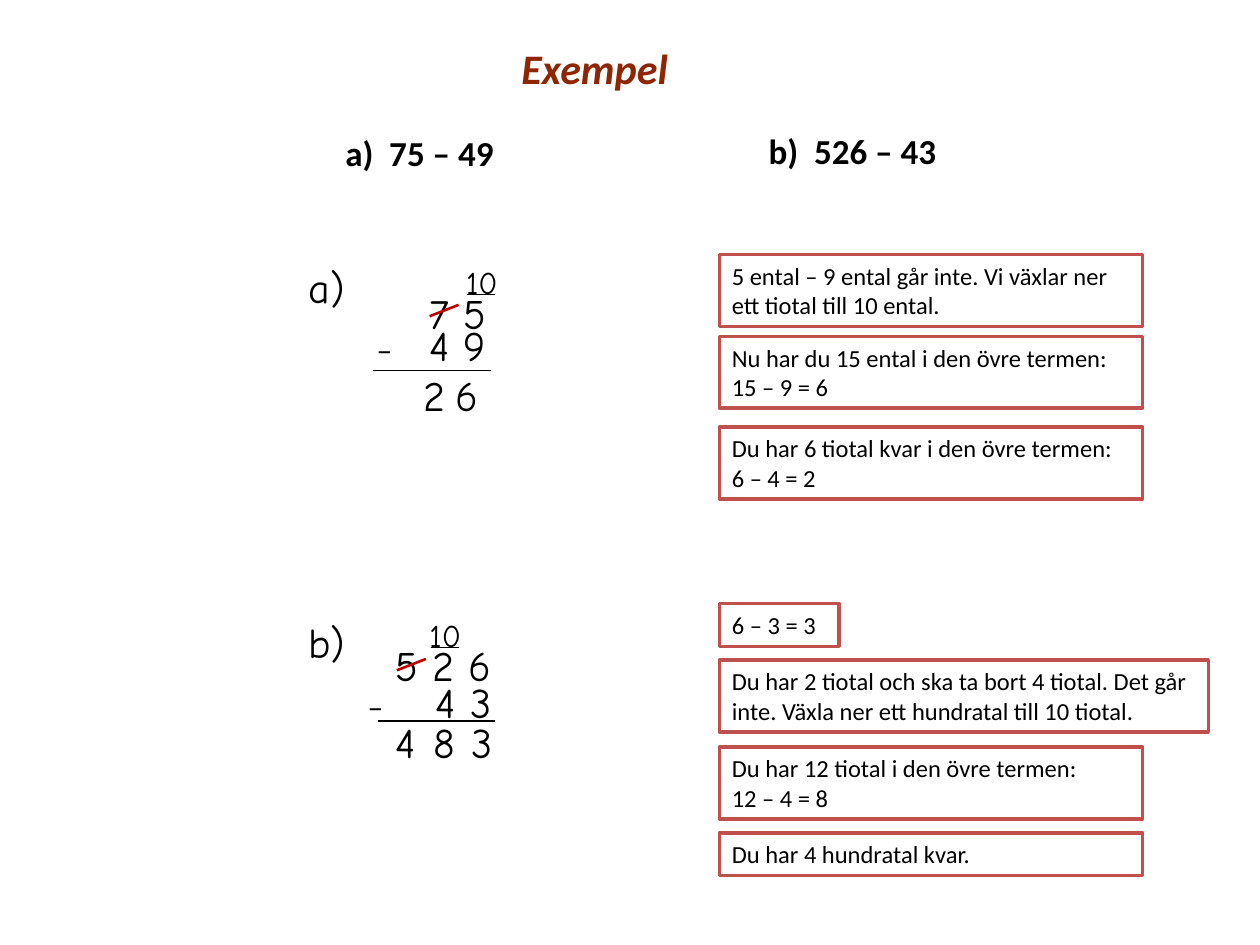
"""Build the slide with two worked examples of column subtraction."""
from lxml.etree import SubElement
from pptx import Presentation
from pptx.dml.color import RGBColor
from pptx.enum.shapes import MSO_CONNECTOR as Connector, MSO_SHAPE as Shape
from pptx.enum.text import MSO_ANCHOR as Anchor
from pptx.oxml.ns import qn
from pptx.util import Inches, Pt


def color(value):
    return RGBColor.from_string(value)


def write(frame, text, font="Comic Neue", size=24, ink="000000", bold=False, italic=False, wrap=True):
    frame.word_wrap = wrap
    frame.text = text
    for paragraph in frame.paragraphs:
        style = paragraph.runs[0].font
        style.name = font
        style.size = Pt(size)
        style.bold = bold
        style.italic = italic
        style.color.rgb = color(ink)


presentation = Presentation()
presentation.slide_width = Inches(10)
presentation.slide_height = Inches(7.5)
slide = presentation.slides.add_slide(presentation.slide_layouts[6])

title = slide.shapes.add_textbox(Inches(4.04), Inches(0.29), Inches(1.37), Inches(0.5))
write(title.text_frame, "Exempel", font="Calibri", ink="8E2503", bold=True, italic=True, wrap=False)

tasks = [("a)  75 – 49", 2.69, 1.06, 1.58), ("b)  526 – 43", 6.05, 1.04, 2.16)]
for text, left, top, width in tasks:
    table = slide.shapes.add_table(
        1, 1, Inches(left), Inches(top), Inches(width), Inches(0.33)).table
    table.first_row = False
    table.horz_banding = False
    cell = table.cell(0, 0)
    cell.fill.background()
    cell.margin_left = cell.margin_right = Inches(0.05)
    cell.margin_top = cell.margin_bottom = 0
    write(cell.text_frame, text, font="Calibri", size=20, bold=True)

digits = [
    ("a)", 2.35, 2.03, 0.54), ("7 5", 3.31, 2.23, 1.14), ("4 9", 3.31, 2.49, 1.14),
    ("2", 3.26, 2.88, 0.29), ("6", 3.52, 2.88, 0.29),
    ("b)", 2.35, 4.84, 0.54), ("5 2 6", 3.04, 5.03, 1.14), ("4 3", 3.36, 5.32, 1.14),
    ("4", 3.04, 5.64, 0.29), ("8", 3.34, 5.64, 0.29), ("3", 3.64, 5.64, 0.29),
]
for text, left, top, width in digits:
    box = slide.shapes.add_textbox(Inches(left), Inches(top), Inches(width), Inches(0.5))
    write(box.text_frame, text)

small_signs = [
    ("10", 3.6, 2.04, "Comic Neue"), ("–", 2.89, 2.57, "Calibri"),
    ("10", 3.31, 4.84, "Comic Neue"), ("–", 2.82, 5.4, "Calibri"),
]
for text, left, top, font in small_signs:
    box = slide.shapes.add_textbox(Inches(left), Inches(top), Inches(0.59), Inches(0.4))
    write(box.text_frame, text, font=font, size=18)

notes = [
    ("5 ental – 9 ental går inte. Vi växlar ner ett tiotal till 10 ental.", 2.02, 3.36, 0.57),
    ("Nu har du 15 ental i den övre termen:\n15 – 9 = 6", 2.67, 3.36, 0.57),
    ("Du har 6 tiotal kvar i den övre termen:\n6 – 4 = 2", 3.39, 3.36, 0.57),
    ("6 – 3 = 3", 4.79, 0.95, 0.34),
    ("Du har 2 tiotal och ska ta bort 4 tiotal. Det går inte. "
     "Växla ner ett hundratal till 10 tiotal.", 5.24, 3.88, 0.57),
    ("Du har 12 tiotal i den övre termen:\n12 – 4 = 8", 5.93, 3.36, 0.57),
    ("Du har 4 hundratal kvar.", 6.61, 3.36, 0.34),
]
for text, top, width, height in notes:
    note = slide.shapes.add_shape(
        Shape.RECTANGLE, Inches(5.71), Inches(top), Inches(width), Inches(height))
    note.shadow.inherit = False
    note.fill.solid()
    note.fill.fore_color.rgb = color("FFFFFF")
    note.line.color.rgb = color("C0504D")
    note.line.width = Pt(2)
    write(note.text_frame, text, font="Calibri", size=14)
    note.text_frame.vertical_anchor = Anchor.TOP
    for paragraph in note.text_frame.paragraphs:
        paragraph.alignment = 1

lines = [
    (2.96, 2.94, 3.9, 2.94, "000000", 1), (3.71, 2.34, 3.93, 2.34, "000000", 0.75),
    (3.41, 2.51, 3.64, 2.42, "C00000", 1.5),
    (3, 5.72, 3.93, 5.72, "000000", 1), (3.42, 5.14, 3.64, 5.14, "000000", 0.75),
    (3.15, 5.32, 3.38, 5.23, "C00000", 1.5),
]
for left, start, right, end, ink, weight in lines:
    line = slide.shapes.add_connector(
        Connector.STRAIGHT, Inches(left), Inches(start), Inches(right), Inches(end))
    line.line.color.rgb = color(ink)
    line.line.width = Pt(weight)
    SubElement(line._element.spPr, qn("a:effectLst"))

presentation.save("out.pptx")
